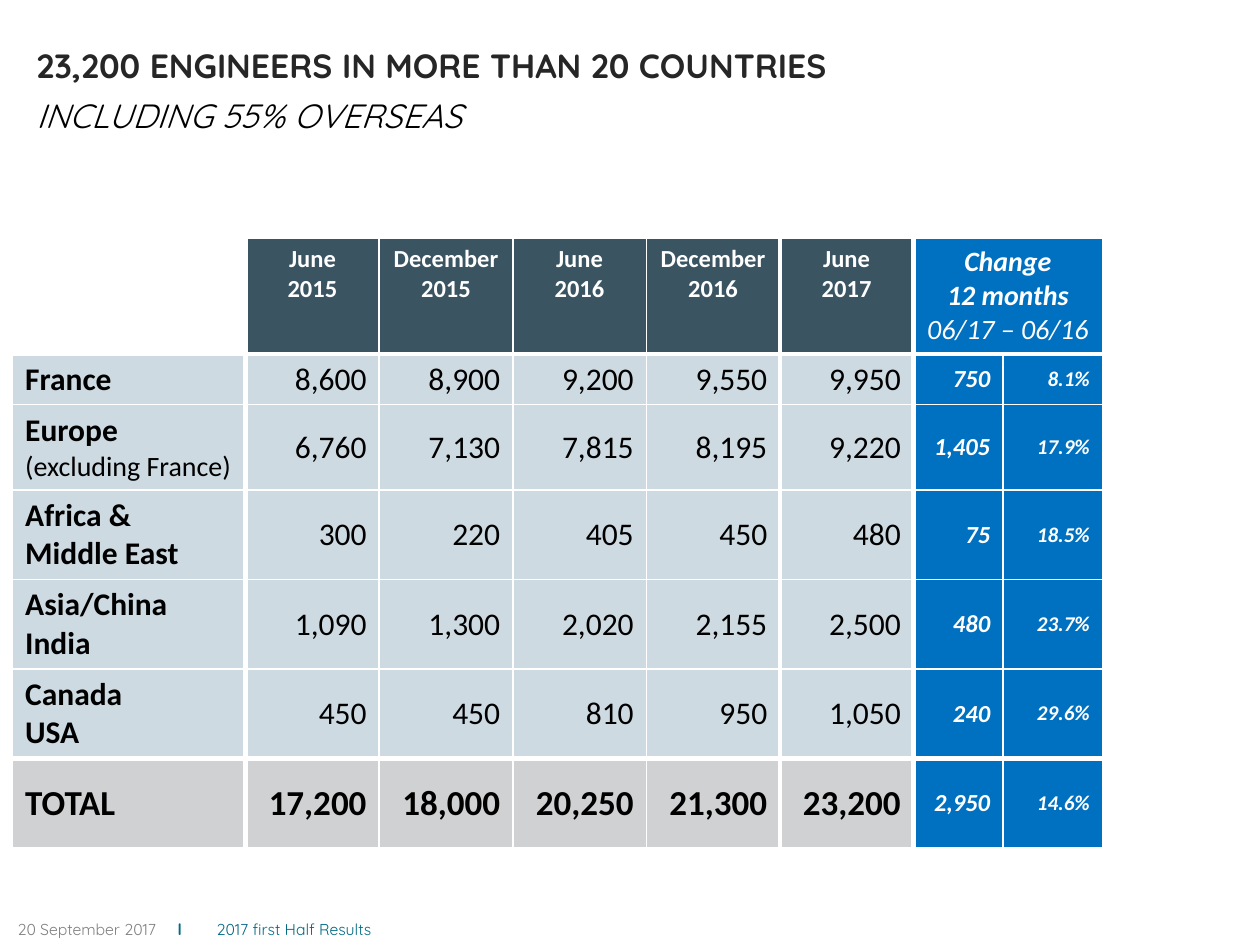
"""Build the slide on engineer headcount by region."""
import dataclasses
import typing

import lxml.etree
import pptx
import pptx.dml.color
import pptx.enum.text
import pptx.oxml.ns
import pptx.util

Inches = pptx.util.Inches
ALIGN = pptx.enum.text.PP_ALIGN
ANCHOR = pptx.enum.text.MSO_ANCHOR


@dataclasses.dataclass(frozen=True)
class Theme:
    title_font: str = "Quicksand"
    table_font: str = "Calibri"
    white: str = "FFFFFF"
    black: str = "000000"
    title: str = "262626"
    grey: str = "808080"
    teal: str = "006983"
    head: str = "3A5462"
    body: str = "CDDAE1"
    total: str = "D0D1D2"
    change: str = "0070C0"
    foot_size: int = 9
    rate_size: int = 12
    small_size: int = 14
    note_size: int = 16
    body_size: int = 18
    total_size: int = 20
    title_size: int = 24
    thin: int = 1
    thick: int = 3


THEME = Theme()


class Style(typing.NamedTuple):
    size: int
    color: str
    bold: bool = False
    italic: bool = False
    font: str = THEME.table_font


class Line(typing.NamedTuple):
    text: str
    style: Style


class Region(typing.NamedTuple):
    label: list[Line]
    counts: str
    gain: str
    rate: str
    height: float


HEAD = Style(THEME.small_size, THEME.white, True)
CHANGE = Style(THEME.note_size, THEME.white, True, True)
SPAN = Style(THEME.note_size, THEME.white, False, True)
NAME = Style(THEME.body_size, THEME.black, True)
NOTE = Style(THEME.note_size, THEME.black)
COUNT = Style(THEME.body_size, THEME.black)
TOTAL = Style(THEME.total_size, THEME.black, True)
GAIN = Style(THEME.small_size, THEME.white, True, True)
RATE = Style(THEME.rate_size, THEME.white, True, True)
TITLE = Style(THEME.title_size, THEME.title, True, font=THEME.title_font)
SUB = Style(THEME.title_size, THEME.black, False, True, THEME.title_font)
DATE = Style(THEME.foot_size, THEME.grey, font=THEME.title_font)
BAR = Style(THEME.foot_size, THEME.teal, True, font=THEME.title_font)
SOURCE = BAR._replace(bold=False)

HEADS = ["June 2015", "December 2015", "June 2016", "December 2016", "June 2017"]
REGIONS = [
    Region([Line("France", NAME)],
           "8,600 8,900 9,200 9,550 9,950", "750", "8.1%", 0.4),
    Region([Line("Europe", NAME), Line("(excluding France)", NOTE)],
           "6,760 7,130 7,815 8,195 9,220", "1,405", "17.9%", 0.68),
    Region([Line("Africa &", NAME), Line("Middle East", NAME)],
           "300 220 405 450 480", "75", "18.5%", 0.71),
    Region([Line("Asia/China", NAME), Line("India", NAME)],
           "1,090 1,300 2,020 2,155 2,500", "480", "23.7%", 0.71),
    Region([Line("Canada", NAME), Line("USA", NAME)],
           "450 450 810 950 1,050", "240", "29.6%", 0.71),
    Region([Line("TOTAL", TOTAL)],
           "17,200 18,000 20,250 21,300 23,200", "2,950", "14.6%", 0.71),
]
WIDTHS = [1.85] + [1.06] * len(HEADS) + [0.71, 0.79]
HEIGHTS = [0.92] + [region.height for region in REGIONS]
THICK_COLS = {0, 4, 5}
THICK_ROWS = {0, len(REGIONS) - 1}


def paint(text: str) -> pptx.dml.color.RGBColor:
    return pptx.dml.color.RGBColor.from_string(text)


def add_run(para, line: Line):
    run = para.add_run()
    run.text = line.text
    style = line.style
    looks = {"name": style.font, "size": pptx.util.Pt(style.size),
             "bold": style.bold, "italic": style.italic}
    for key, value in looks.items():
        setattr(run.font, key, value)
    run.font.color.rgb = paint(style.color)
    return run


def add_box(slide, left: float, top: float, width: float, height: float,
            inset: tuple[float, float]):
    shape = slide.shapes.add_textbox(*map(Inches, (left, top, width, height)))
    side, edge = map(Inches, inset)
    looks = {"word_wrap": True, "vertical_anchor": ANCHOR.MIDDLE,
             "margin_left": side, "margin_right": side,
             "margin_top": edge, "margin_bottom": edge}
    for key, value in looks.items():
        setattr(shape.text_frame, key, value)
    return shape.text_frame.paragraphs[0]


def add_title(slide) -> None:
    para = add_box(slide, 0.19, 0.34, 8.32, 0.7, (0.1, 0.05))
    first = add_run(para, Line("23,200 engineers in more than 20 countries", TITLE))
    para.add_line_break()
    last = add_run(para, Line("including 55% overseas", SUB))
    for run in (first, last):
        run.font._element.set("cap", "small")


def add_foot(slide) -> None:
    para = add_box(slide, 0.14, 7.23, 4.96, 0.29, (0, 0))
    qn = pptx.oxml.ns.qn
    tabs = lxml.etree.SubElement(para._p.get_or_add_pPr(), qn("a:tabLst"))
    for stop in (1.27, 1.58):
        lxml.etree.SubElement(tabs, qn("a:tab"), pos=str(Inches(stop)), algn="l")
    for line in (Line("20 September 2017\t", DATE), Line("l\t", BAR),
                 Line("2017 first Half Results", SOURCE)):
        add_run(para, line)


def add_rules(cell, row: int, col: int) -> None:
    qn = pptx.oxml.ns.qn
    props = cell._tc.get_or_add_tcPr()
    sides = {"L": col - 1 in THICK_COLS, "R": col in THICK_COLS,
             "T": row - 1 in THICK_ROWS, "B": row in THICK_ROWS}
    for side, thick in sides.items():
        width = pptx.util.Pt(THEME.thick if thick else THEME.thin)
        rule = lxml.etree.SubElement(props, qn(f"a:ln{side}"), w=str(width))
        fill = lxml.etree.SubElement(rule, qn("a:solidFill"))
        lxml.etree.SubElement(fill, qn("a:srgbClr"), val=THEME.white)


def fill_cell(cell, lines: list[Line], color: str, align, anchor=ANCHOR.MIDDLE) -> None:
    cell.fill.solid()
    cell.fill.fore_color.rgb = paint(color)
    cell.vertical_anchor = anchor
    frame = cell.text_frame
    for i, line in enumerate(lines):
        para = frame.add_paragraph() if i else frame.paragraphs[0]
        para.alignment = align
        add_run(para, line)


def add_grid(slide) -> None:
    size = map(Inches, (0.1, 1.89, sum(WIDTHS), sum(HEIGHTS)))
    table = slide.shapes.add_table(len(HEIGHTS), len(WIDTHS), *size).table
    table.first_row = table.horz_banding = False
    for col, width in enumerate(WIDTHS):
        table.columns[col].width = Inches(width)
    for row, height in enumerate(HEIGHTS):
        table.rows[row].height = Inches(height)
        for col in range(len(WIDTHS)):
            add_rules(table.cell(row, col), row, col)
    table.cell(0, 0).fill.background()
    for col, head in enumerate(HEADS, 1):
        lines = [Line(word, HEAD) for word in head.split()]
        fill_cell(table.cell(0, col), lines, THEME.head, ALIGN.CENTER, ANCHOR.TOP)
    table.cell(0, 6).merge(table.cell(0, 7))
    lines = [Line("Change", CHANGE), Line("12 months", CHANGE), Line("06/17 – 06/16", SPAN)]
    fill_cell(table.cell(0, 6), lines, THEME.change, ALIGN.CENTER, ANCHOR.TOP)
    for row, region in enumerate(REGIONS, 1):
        final = row == len(REGIONS)
        color, style = (THEME.total, TOTAL) if final else (THEME.body, COUNT)
        fill_cell(table.cell(row, 0), region.label, color, ALIGN.LEFT)
        cells = [(Line(count, style), color) for count in region.counts.split()]
        cells += [(Line(region.gain, GAIN), THEME.change),
                  (Line(region.rate, RATE), THEME.change)]
        for col, (line, shade) in enumerate(cells, 1):
            fill_cell(table.cell(row, col), [line], shade, ALIGN.RIGHT)


def main() -> None:
    deck = pptx.Presentation()
    deck.slide_width, deck.slide_height = Inches(10), Inches(7.5)
    slide = deck.slides.add_slide(deck.slide_layouts[6])
    add_foot(slide)
    add_title(slide)
    add_grid(slide)
    deck.save("out.pptx")


if __name__ == "__main__":
    main()
